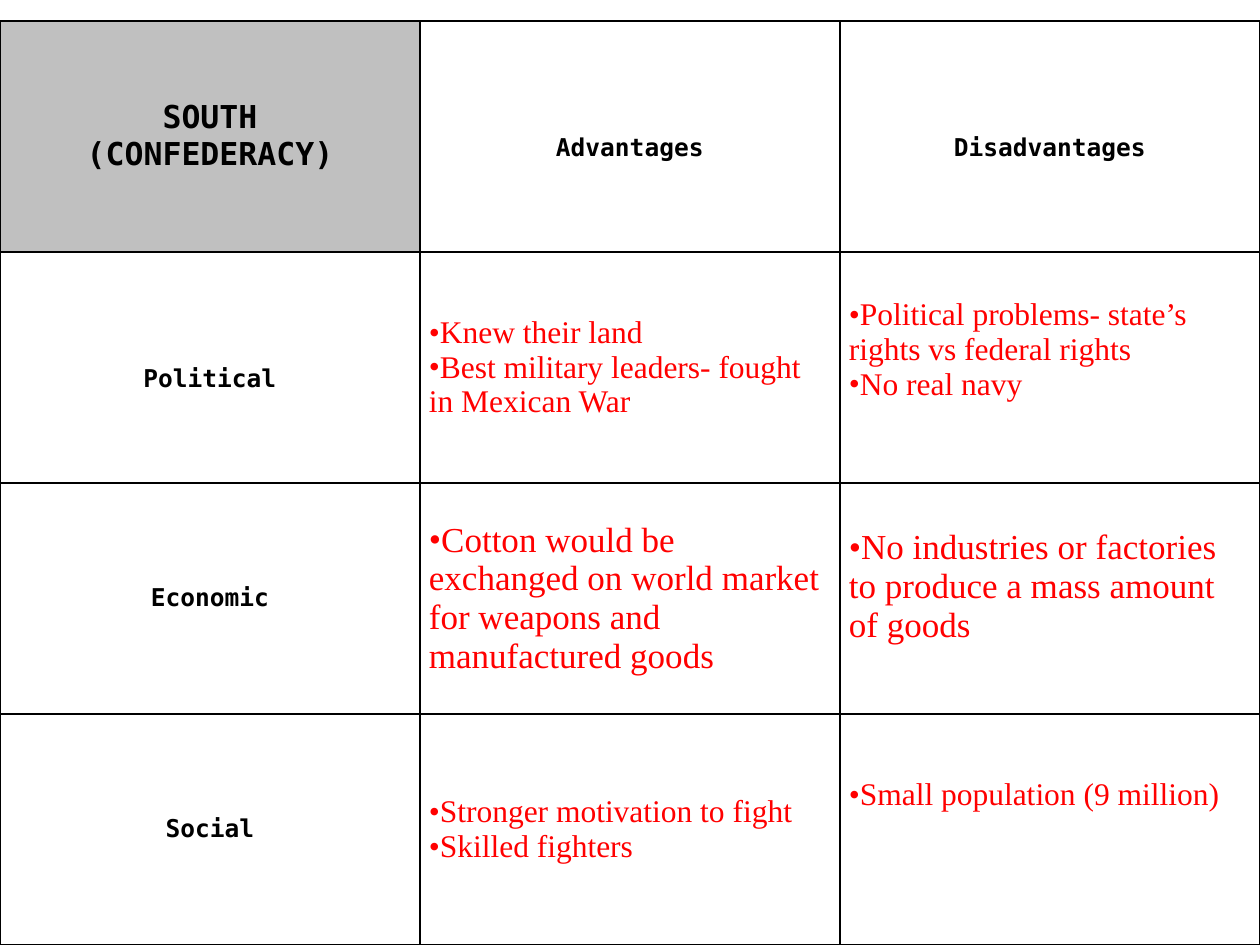
from lxml import etree
from pptx import Presentation
from pptx.dml.color import RGBColor
from pptx.enum.text import MSO_ANCHOR, PP_ALIGN
from pptx.oxml.ns import qn
from pptx.util import Cm, Pt

BLACK = RGBColor(0x00, 0x00, 0x00)
RED = RGBColor(0xFF, 0x00, 0x00)
GRAY = RGBColor(0xC0, 0xC0, 0xC0)
WHITE = RGBColor(0xFF, 0xFF, 0xFF)
MIDDLE = MSO_ANCHOR.MIDDLE
CENTER = PP_ALIGN.CENTER
LEFT = PP_ALIGN.LEFT
LABEL_FONT = "DejaVu Sans Mono"
BODY_FONT = "Times New Roman"
TABLE_TOP = Cm(0.42)


def write_cell(cell, lines, size=14, bullets=False, fill=WHITE, top=0, bottom=0):
    """Fill a cell with lines, as a centred label or as a bulleted list."""
    cell.vertical_anchor = MIDDLE
    cell.margin_left = cell.margin_right = Cm(0.18)
    cell.margin_top, cell.margin_bottom = Cm(top), Cm(bottom)
    cell.fill.solid()
    cell.fill.fore_color.rgb = fill
    frame = cell.text_frame
    for index, line in enumerate(lines):
        para = frame.paragraphs[0] if index == 0 else frame.add_paragraph()
        para.alignment = LEFT if bullets else CENTER
        span = para.add_run()
        span.text = line
        span.font.name = BODY_FONT if bullets else LABEL_FONT
        span.font.size = Pt(size)
        span.font.bold = not bullets
        span.font.color.rgb = RED if bullets else BLACK
        if bullets:
            properties = para._p.get_or_add_pPr()
            properties.set("marL", "0")
            properties.set("indent", "0")
            etree.SubElement(properties, qn("a:buFont")).set("typeface", BODY_FONT)
            etree.SubElement(properties, qn("a:buChar")).set("char", "•")


def add_borders(cell, color=BLACK, width=Pt(1)):
    """Draw all four sides; lines must come before the fill in the XML."""
    properties = cell._tc.get_or_add_tcPr()
    for index, side in enumerate(("a:lnL", "a:lnR", "a:lnT", "a:lnB")):
        line = etree.Element(qn(side), w=str(width))
        solid = etree.SubElement(line, qn("a:solidFill"))
        etree.SubElement(solid, qn("a:srgbClr")).set("val", str(color))
        properties.insert(index, line)


deck = Presentation()
deck.slide_width, deck.slide_height = Cm(25.4), Cm(19.05)
page = deck.slides.add_slide(deck.slide_layouts[6])

# Content: each cell is its lines and its format
label_drop = {"top": 0.45}
body = {"bullets": True, "size": 18}
large_body = {"bullets": True, "size": 20}
rows = [
    [(["SOUTH", "(CONFEDERACY)"], {"size": 18, "fill": GRAY}),
     (["Advantages"], label_drop),
     (["Disadvantages"], label_drop)],
    [(["Political"], label_drop),
     (["Knew their land",
       "Best military leaders- fought in Mexican War"], body),
     (["Political problems- state’s rights vs federal rights",
       "No real navy"], {**body, "bottom": 0.72})],
    [(["Economic"], {}),
     (["Cotton would be exchanged on world market for weapons and "
       "manufactured goods"], large_body),
     (["No industries or factories to produce a mass amount of goods"],
      {**large_body, "bottom": 0.48})],
    [(["Social"], {}),
     (["Stronger motivation to fight", "Skilled fighters"], body),
     (["Small population (9 million)"], {**body, "bottom": 1.4})],
]

# Table grid: equal cells that fill the page below the top gap
row_count, column_count = len(rows), len(rows[0])
table_height = deck.slide_height - TABLE_TOP
table = page.shapes.add_table(
    row_count, column_count, Cm(0), TABLE_TOP,
    deck.slide_width, table_height).table
table.first_row = table.horz_banding = False
for column in table.columns:
    column.width = deck.slide_width // column_count
for row in table.rows:
    row.height = table_height // row_count

# Table cells
for row_index, row_cells in enumerate(rows):
    for column_index, (lines, style) in enumerate(row_cells):
        cell = table.cell(row_index, column_index)
        write_cell(cell, lines, **style)
        add_borders(cell)

deck.save("out.pptx")
